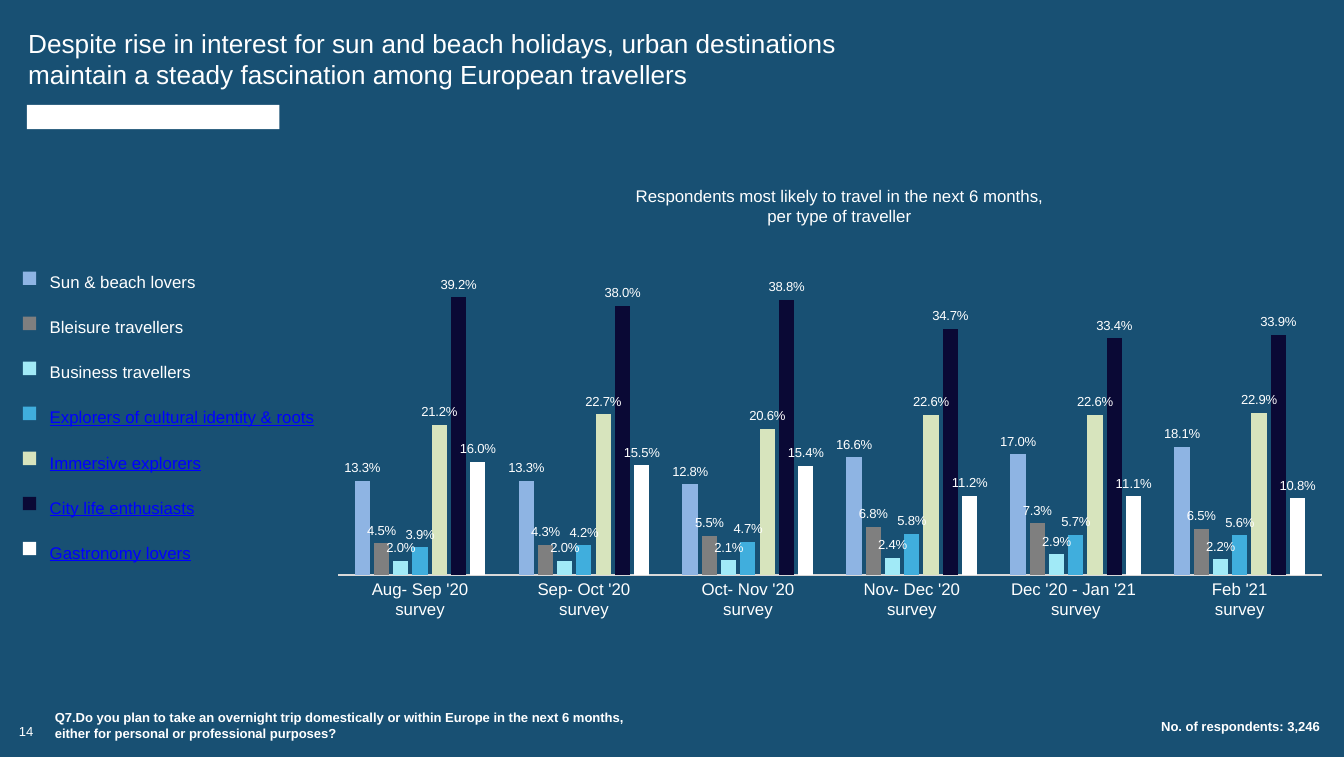
"""Build the slide on traveller types and their likelihood to travel."""
from lxml import etree
from pptx import Presentation
from pptx import util as u
from pptx.chart.data import CategoryChartData
from pptx.dml.color import RGBColor
from pptx.enum import chart as charts, shapes, text
from pptx.oxml import ns

COLORS = {"background": "185073", "white": "FFFFFF", "link": "0000FF", "axis": "D9D9D9", "black": "000000"}
FONT = "Arial"
TITLE = ["Despite rise in interest for sun and beach holidays, urban destinations",
         "maintain a steady fascination among European travellers"]
SUBTITLE = "Respondents most likely to travel in the next 6 months, per type of traveller"
QUESTION = ("Q7.Do you plan to take an overnight trip domestically or within Europe "
            "in the next 6 months, either for personal or professional purposes?")
RESPONDENTS = "No. of respondents: 3,246"
PERIODS = ["Aug- Sep '20\nsurvey", "Sep- Oct '20\nsurvey", "Oct- Nov '20\nsurvey",
           "Nov- Dec '20\nsurvey", "Dec '20 - Jan '21 \nsurvey", "Feb '21\nsurvey"]
TRAVELLERS = [
    ("Sun & beach lovers", "8EB4E3", False, (0.133, 0.133, 0.128, 0.166, 0.17, 0.181)),
    ("Bleisure travellers", "7F7F7F", False, (0.045, 0.043, 0.055, 0.068, 0.073, 0.065)),
    ("Business travellers", "A1EAF7", False, (0.02, 0.02, 0.021, 0.024, 0.029, 0.022)),
    ("Explorers of cultural identity & roots", "40AEDD", True, (0.039, 0.042, 0.047, 0.058, 0.057, 0.056)),
    ("Immersive explorers", "D7E4BD", True, (0.212, 0.227, 0.206, 0.226, 0.226, 0.229)),
    ("City life enthusiasts", "0A0935", True, (0.392, 0.38, 0.388, 0.347, 0.334, 0.339)),
    ("Gastronomy lovers", "FFFFFF", True, (0.16, 0.155, 0.154, 0.112, 0.111, 0.108)),
]
PLOT = {"x": 0, "y": 0.101, "w": 1, "h": 0.696}
LEGEND_TOP, LEGEND_STEP, SWATCH = 1.94, 0.335, 0.1


def inches(*lengths):
    return [u.Inches(length) for length in lengths]


def paint(fill, color):
    fill.solid()
    fill.fore_color.rgb = RGBColor.from_string(color)


def style(font, size, color=COLORS["white"], bold=False, name=FONT):
    font.name, font.size, font.bold = name, u.Pt(size), bold
    font.color.rgb = RGBColor.from_string(color)


def add_text(slide, box, content, size, align=text.PP_ALIGN.LEFT, color=COLORS["white"],
             bold=False, insets=(0.1, 0.05, 0.1, 0.05), line=None):
    frame = slide.shapes.add_textbox(*inches(*box)).text_frame
    frame.word_wrap = True
    frame.margin_left, frame.margin_top, frame.margin_right, frame.margin_bottom = inches(*insets)
    paragraph = frame.paragraphs[0]
    paragraph.text, paragraph.alignment = content, align
    if line:
        paragraph.line_spacing = u.Pt(line)
    style(paragraph.font, size, color, bold)
    return paragraph


def add_block(slide, box, color):
    block = slide.shapes.add_shape(shapes.MSO_SHAPE.RECTANGLE, *inches(*box))
    block.shadow.inherit = False
    paint(block.fill, color)
    block.line.fill.background()


def add_title(slide):
    title = slide.shapes.title
    title.left, title.top, title.width, title.height = inches(0.11, 0.15, 7.22, 0.57)
    frame = title.text_frame
    frame.text = "\n".join(TITLE)
    frame.auto_size = text.MSO_AUTO_SIZE.NONE
    frame.vertical_anchor = text.MSO_ANCHOR.TOP
    for paragraph in frame.paragraphs:
        paragraph.alignment = text.PP_ALIGN.LEFT
        style(paragraph.font, 14)


def add_legend(slide):
    for row, (label, color, linked, _) in enumerate(TRAVELLERS):
        top = LEGEND_TOP + row * LEGEND_STEP
        add_block(slide, (0.17, top + 0.08, SWATCH, SWATCH), color)
        paragraph = add_text(slide, (0.33, top, 2.71, 0.24), label, 9, line=15.4,
                             color=COLORS["link" if linked else "white"],
                             insets=(0.04, 0.02, 0.04, 0.04))
        if linked:
            paragraph.font.underline = True


def place_plot(chart):
    area = chart.plots[0]._element.getparent()
    for old in area.findall(ns.qn("c:layout")):
        area.remove(old)
    layout = etree.Element(ns.qn("c:layout"))
    area.insert(0, layout)
    manual = etree.SubElement(layout, ns.qn("c:manualLayout"))
    settings = {"layoutTarget": "inner", "xMode": "edge", "yMode": "edge", **PLOT}
    for tag, value in settings.items():
        etree.SubElement(manual, ns.qn("c:" + tag)).set("val", str(value))


def add_survey_chart(slide):
    data = CategoryChartData(number_format="0.0%")
    data.categories = PERIODS
    for number, traveller in enumerate(TRAVELLERS, 1):
        data.add_series(f"Series {number}", traveller[3])
    chart = slide.shapes.add_chart(charts.XL_CHART_TYPE.COLUMN_CLUSTERED,
                                   *inches(2.51, 1.56, 7.33, 3.41), data).chart
    chart.has_legend = chart.has_title = False
    style(chart.font, 10, COLORS["black"], name="Calibri")
    plot = chart.plots[0]
    plot.gap_width, plot.overlap, plot.vary_by_categories = 219, -27, False
    for series, (_, color, _, _) in zip(plot.series, TRAVELLERS):
        paint(series.format.fill, color)
        labels = series.data_labels
        labels.show_value = True
        labels.number_format, labels.number_format_is_linked = "0.0%", False
        labels.position = charts.XL_LABEL_POSITION.OUTSIDE_END
        style(labels.font, 7)
    periods, shares = chart.category_axis, chart.value_axis
    periods.major_tick_mark = charts.XL_TICK_MARK.NONE
    periods.format.line.width = u.Pt(0.75)
    periods.format.line.color.rgb = RGBColor.from_string(COLORS["axis"])
    style(periods.tick_labels.font, 9)
    shares.visible = shares.has_major_gridlines = False
    shares.minimum_scale, shares.maximum_scale = 0, 0.45
    place_plot(chart)


def main():
    presentation = Presentation()
    presentation.slide_width, presentation.slide_height = inches(10, 5.63)
    slide = presentation.slides.add_slide(presentation.slide_layouts[5])
    paint(slide.background.fill, COLORS["background"])
    add_title(slide)
    add_block(slide, (0.2, 0.78, 1.88, 0.18), COLORS["white"])
    add_legend(slide)
    add_text(slide, (4.56, 1.33, 3.37, 0.4), SUBTITLE, 9, text.PP_ALIGN.CENTER)
    add_survey_chart(slide)
    add_text(slide, (0.08, 5.23, 0.23, 0.23), "14", 7, text.PP_ALIGN.CENTER,
             insets=(0, 0.03, 0, 0), line=17)
    add_text(slide, (0.31, 5.23, 4.6, 0.34), QUESTION, 7, bold=True)
    add_text(slide, (8.46, 5.29, 1.46, 0.22), RESPONDENTS, 7, text.PP_ALIGN.RIGHT, bold=True)
    presentation.save("out.pptx")


if __name__ == "__main__":
    main()
